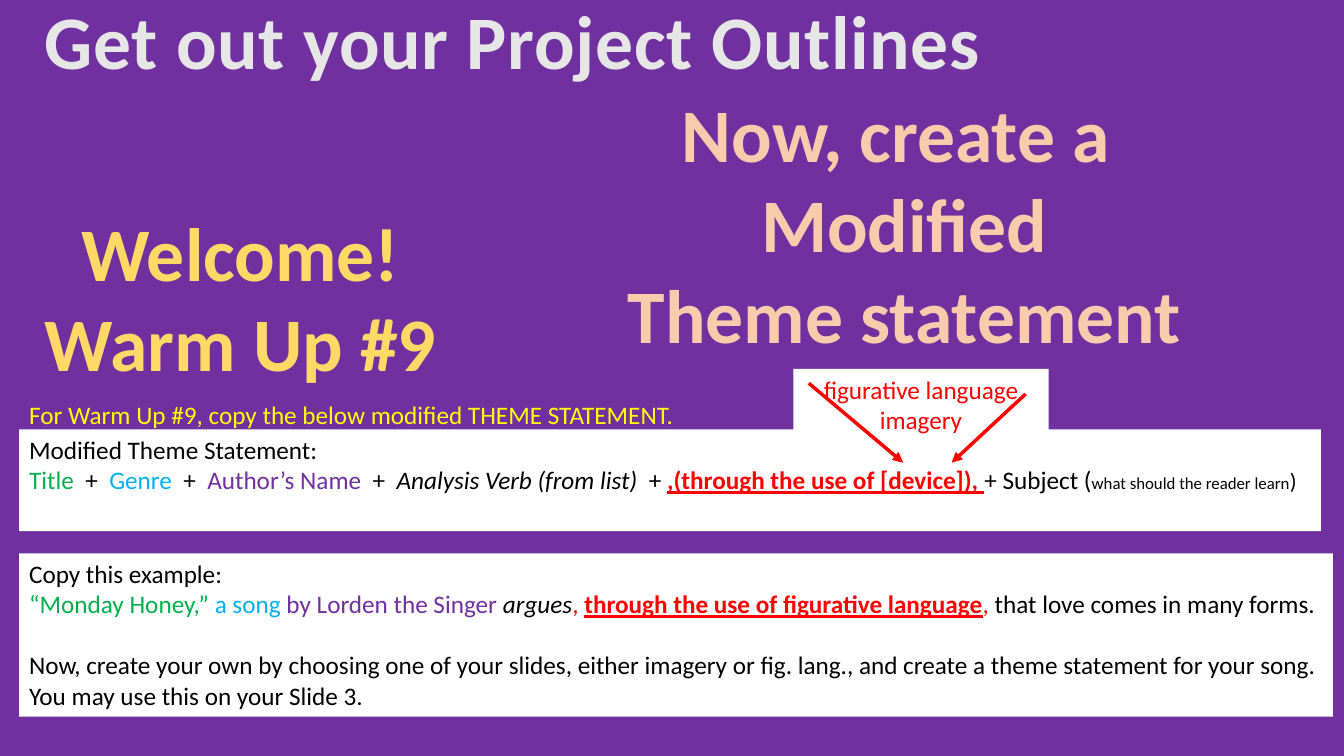
from collections import namedtuple

from lxml.etree import SubElement
from pptx import Presentation
from pptx.dml.color import RGBColor
from pptx.enum.shapes import MSO_CONNECTOR, MSO_SHAPE
from pptx.enum.text import MSO_ANCHOR, MSO_AUTO_SIZE, PP_ALIGN
from pptx.oxml.ns import qn
from pptx.util import Inches, Pt

WIDTH, HEIGHT = Inches(13.33), Inches(7.5)
FONT = "Calibri"
PURPLE, WHITE, BLACK, RED = "7030A0", "FFFFFF", "000000", "FF0000"
GREEN, BLUE, YELLOW = "00B050", "00B0F0", "FFFF00"
GOLD, PEACH, SILVER = "FFD966", "F8CBAD", "E7E6E6"
BODY, DISPLAY = 18, 54
MARGIN = 1.43

Box = namedtuple("Box", "left top width height")


def share(left, top, width, height):
    """Turn percentages of the slide's size into a box."""
    return Box(int(WIDTH * left / 100), int(HEIGHT * top / 100),
               int(WIDTH * width / 100), int(HEIGHT * height / 100))


def color(hex_code):
    return RGBColor.from_string(hex_code)


def part(text, hex_code=BLACK, size=BODY, bold=False, italic=False, underline=False):
    return text, hex_code, size, bold, italic, underline


def write(frame, lines, align=PP_ALIGN.LEFT, wrap=True):
    """Fill a text frame; each line is a list of parts."""
    frame.word_wrap = wrap
    frame.auto_size = MSO_AUTO_SIZE.NONE
    frame.vertical_anchor = MSO_ANCHOR.TOP
    frame.text = "\n".join("" for _ in lines)
    for paragraph, parts in zip(frame.paragraphs, lines):
        paragraph.alignment = align
        paragraph.line_spacing = 1.0
        for text, hex_code, size, bold, italic, underline in parts:
            run = paragraph.add_run()
            run.text = text
            font = run.font
            font.name, font.size = FONT, Pt(size)
            font.bold, font.italic, font.underline = bold, italic, underline
            font.color.rgb = color(hex_code)


def add_display(slide, box, lines, hex_code):
    """Large centred heading lines."""
    heading = slide.shapes.add_textbox(*box)
    write(heading.text_frame, [[part(line, hex_code, DISPLAY, bold=True)] for line in lines],
          PP_ALIGN.CENTER, wrap=False)


def add_title(slide, box, text):
    title = slide.shapes.title
    title.left, title.top, title.width, title.height = box
    write(title.text_frame, [[part(text, SILVER, DISPLAY, bold=True)]],
          PP_ALIGN.CENTER, wrap=False)
    title.text_frame.paragraphs[0].runs[0].font._element.set("spc", "50")


def add_instruction(slide, box, text):
    instruction = slide.shapes.add_textbox(*box)
    write(instruction.text_frame, [[part(text, YELLOW)]])


def add_panel(slide, box, lines, align=PP_ALIGN.LEFT):
    """White panel with text from its top edge."""
    panel = slide.shapes.add_shape(MSO_SHAPE.RECTANGLE, *box)
    panel.shadow.inherit = False
    panel.fill.solid()
    panel.fill.fore_color.rgb = color(WHITE)
    panel.line.fill.background()
    write(panel.text_frame, lines, align)
    return panel


def add_devices(slide, box, devices):
    """Panel of devices with two arrows down to the formula."""
    add_panel(slide, box, [[part(device, RED)] for device in devices], PP_ALIGN.CENTER)
    for x1, y1, x2, y2 in ((0.06, 0.2, 0.43, 1.31), (0.91, 0.35, 0.62, 1.31)):
        arrow = slide.shapes.add_connector(
            MSO_CONNECTOR.STRAIGHT,
            int(box.left + x1 * box.width), int(box.top + y1 * box.height),
            int(box.left + x2 * box.width), int(box.top + y2 * box.height))
        arrow.line.color.rgb = color(RED)
        arrow.line.width = Pt(2.5)
        SubElement(arrow.line._get_or_add_ln(), qn("a:tailEnd"), type="triangle")
        SubElement(arrow._element.spPr, qn("a:effectLst"))


def add_formula(slide, box):
    plus = part("  +  ")
    add_panel(slide, box, [
        [part("Modified Theme Statement:")],
        [part("Title", GREEN), plus, part("Genre", BLUE), plus,
         part("Author’s Name", PURPLE), plus,
         part("Analysis Verb (from list)  ", italic=True), part("+ "),
         part(",(through the use of [device]), ", RED, bold=True, underline=True),
         part("+ Subject ("), part("what should the reader learn", size=12),
         part(")", size=16)],
    ])


def add_example(slide, box):
    example = add_panel(slide, box, [
        [part("Copy this example:")],
        [part("“Monday Honey,” ", GREEN), part("a song ", BLUE),
         part("by Lorden the Singer ", PURPLE), part("argues", italic=True),
         part(", ", RED),
         part("through the use of figurative language", RED, bold=True, underline=True),
         part(",", RED), part(" that love comes in many forms.")],
        [part("Now, create your own by choosing one of your slides, either imagery or "
              "fig. lang., and create a theme statement for your song. "
              "You may use this on your Slide 3.")],
    ])
    example.text_frame.paragraphs[-1].space_before = Pt(22)


def build_warm_up(deck):
    slide = deck.slides.add_slide(deck.slide_layouts[5])
    slide.background.fill.solid()
    slide.background.fill.fore_color.rgb = color(PURPLE)

    # Headings
    add_title(slide, share(MARGIN, -1.47, 73.52, 13.47), "Get out your Project Outlines")
    add_display(slide, share(2.4, 26.53, 30.98, 25.6), ["Welcome!", "Warm Up #9"], GOLD)
    add_display(slide, share(45.76, 10.8, 43.06, 37.73),
                ["Now, create a ", "Modified", "Theme statement"], PEACH)

    # Theme statement and its example
    add_instruction(slide, share(MARGIN, 52.13, 93.17, 9.47),
                    "For Warm Up #9, copy the below modified THEME STATEMENT.")
    add_formula(slide, share(MARGIN, 56.8, 96.85, 13.47))
    add_example(slide, share(MARGIN, 73.2, 97.75, 21.6))
    add_devices(slide, share(59.04, 48.8, 18.98, 9.47), ["figurative language", "imagery"])


def main():
    deck = Presentation()
    deck.slide_width, deck.slide_height = WIDTH, HEIGHT
    build_warm_up(deck)
    deck.save("out.pptx")


if __name__ == "__main__":
    main()
